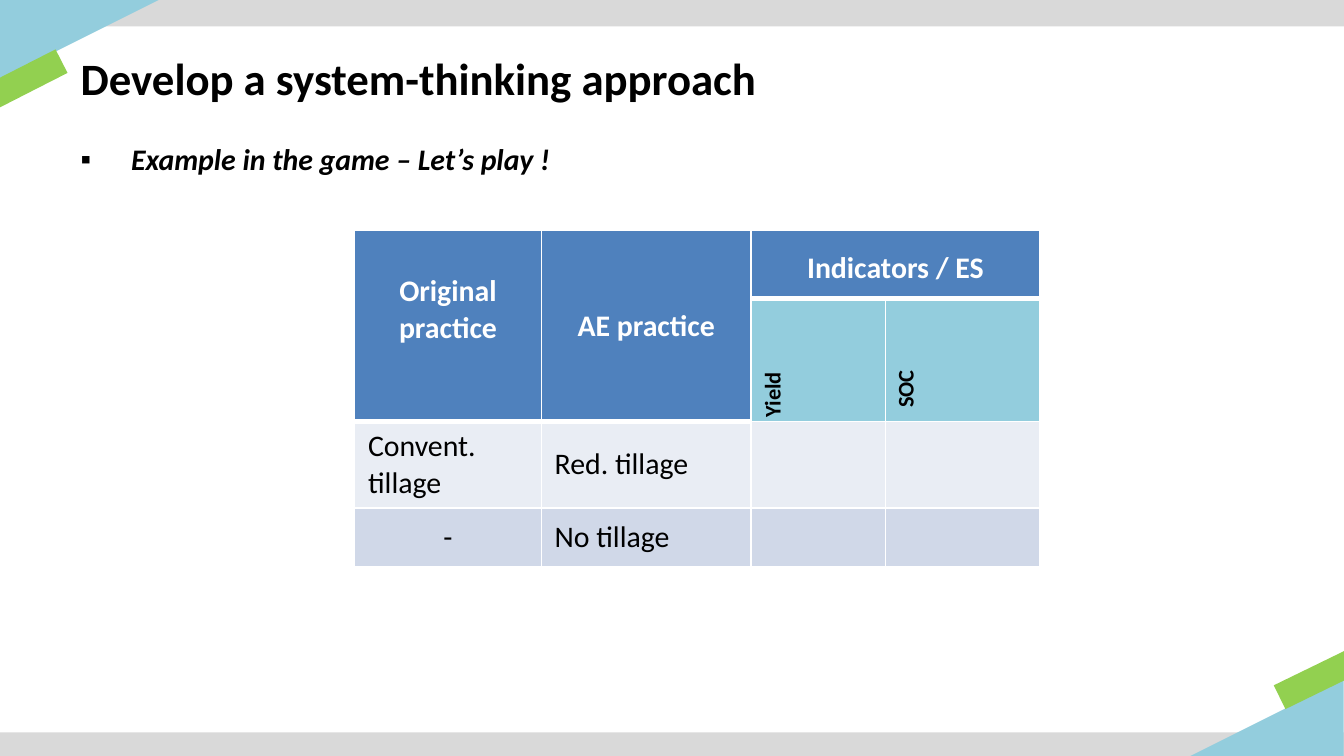
from lxml.etree import SubElement
from pptx import Presentation
from pptx.dml.color import RGBColor
from pptx.enum.shapes import MSO_SHAPE as Shape
from pptx.enum.text import MSO_ANCHOR as Anchor, MSO_AUTO_SIZE as AutoSize, PP_ALIGN as Align
from pptx.oxml.ns import qn
from pptx.util import Pt

GREY, TEAL, GREEN = "D9D9D9", "93CDDD", "92D050"
BLUE, WHITE, BLACK = "4F81BD", "FFFFFF", "000000"
LIGHT, MID = "E9EDF4", "D0D8E8"
HEADER = dict(bold=True, color=WHITE, align=Align.CENTER)
VERTICAL = dict(bold=True, size=12)


def rgb(value):
    """Return a colour from a hex string."""
    return RGBColor.from_string(value)


def write(tf, text, size=16, bold=False, italic=False, color=BLACK,
          align=Align.LEFT, spacing=None):
    """Write one formatted paragraph and return it."""
    p = tf.paragraphs[0]
    p.alignment = align
    if spacing:
        p.line_spacing = spacing
    r = p.add_run()
    r.text = text
    r.font.name = "Calibri"
    r.font.size = Pt(size)
    r.font.bold = bold
    r.font.italic = italic
    r.font.color.rgb = rgb(color)
    return p


def add_decor(s, kind, box, color, rotation=0):
    """Add a plain filled shape."""
    sp = s.shapes.add_shape(kind, *map(Pt, box))
    sp.shadow.inherit = False
    sp.fill.solid()
    sp.fill.fore_color.rgb = rgb(color)
    sp.line.fill.background()
    sp.rotation = rotation
    if kind == Shape.ISOSCELES_TRIANGLE:
        sp.adjustments[0] = 0


def place(sp, box, anchor):
    """Move a placeholder and return its text frame."""
    sp.left, sp.top, sp.width, sp.height = map(Pt, box)
    tf = sp.text_frame
    tf.word_wrap = True
    tf.auto_size = AutoSize.NONE
    tf.vertical_anchor = anchor
    return tf


def set_bullet(p, char, indent):
    """Give a paragraph a hanging bullet."""
    pPr = p._p.get_or_add_pPr()
    pPr.set("marL", str(Pt(indent)))
    pPr.set("indent", str(-Pt(indent)))
    SubElement(pPr, qn("a:buFont"), typeface="Arial")
    SubElement(pPr, qn("a:buChar"), char=char)


def set_borders(cell, **widths):
    """Draw white cell edges, keyed L, R, T, B."""
    tcPr = cell._tc.get_or_add_tcPr()
    for side, width in widths.items():
        ln = SubElement(tcPr, qn(f"a:ln{side}"), w=str(Pt(width)))
        SubElement(SubElement(ln, qn("a:solidFill")), qn("a:srgbClr"), val=WHITE)


def set_margins(cell, x, y):
    """Set the horizontal and vertical cell margins."""
    cell.margin_left = cell.margin_right = Pt(x)
    cell.margin_top = cell.margin_bottom = Pt(y)


def add_practice_table(s):
    """Add the table of practices and indicators."""
    widths, heights = (100, 112.5, 72, 82.5), (36.5, 60, 45.5, 31.5)
    fills = ([BLUE] * 4, [BLUE, BLUE, TEAL, TEAL], [LIGHT] * 4, [MID] * 4)
    table = s.shapes.add_table(4, 4, Pt(190), Pt(123.5), Pt(sum(widths)),
                               Pt(sum(heights))).table
    for column, width in zip(table.columns, widths):
        column.width = Pt(width)
    for i, (row, height) in enumerate(zip(table.rows, heights)):
        row.height = Pt(height)
        for cell, fill in zip(row.cells, fills[i]):
            top = {} if i else {"T": 1}
            set_borders(cell, L=1, R=1, **top, B=3 if fill == BLUE else 1)
            cell.fill.solid()
            cell.fill.fore_color.rgb = rgb(fill)
            cell.vertical_anchor = Anchor.MIDDLE
    for start, end in (((0, 0), (1, 0)), ((0, 1), (1, 1)), ((0, 2), (0, 3))):
        table.cell(*start).merge(table.cell(*end))

    texts = {
        (0, 0): ("Original practice", HEADER),
        (0, 1): ("AE practice", HEADER),
        (0, 2): ("Indicators / ES", dict(HEADER, spacing=1.2)),
        (1, 2): ("Yield", dict(VERTICAL, align=Align.JUSTIFY, spacing=1.2)),
        (1, 3): ("SOC", VERTICAL),
        (2, 0): ("Convent. tillage", {}),
        (2, 1): ("Red. tillage", {}),
        (3, 0): ("-", dict(align=Align.CENTER)),
        (3, 1): ("No tillage", {}),
    }
    for position, (text, style) in texts.items():
        write(table.cell(*position).text_frame, text, **style)
    for position in ((0, 1), (0, 2), (1, 2)):
        set_margins(table.cell(*position), 2, 1.5)
    for column in (2, 3):
        table.cell(1, column)._tc.get_or_add_tcPr().set("vert", "vert270")
    corner = table.cell(0, 0)
    corner.vertical_anchor = Anchor.TOP
    corner.margin_top = Pt(23)


def main():
    """Build and save the slide."""
    prs = Presentation()
    prs.slide_width, prs.slide_height = Pt(720), Pt(405)
    s = prs.slides.add_slide(prs.slide_layouts[1])

    add_decor(s, Shape.RECTANGLE, (0, 0, 720, 14.2), GREY)
    add_decor(s, Shape.ISOSCELES_TRIANGLE, (21.25, -21.25, 42.5, 85), TEAL, 90)
    add_decor(s, Shape.RECTANGLE, (-7.2, 35.3, 42.5, 14.2), GREEN, 333)
    add_decor(s, Shape.RECTANGLE, (0, 392.4, 720, 14.2), GREY)
    add_decor(s, Shape.ISOSCELES_TRIANGLE, (656, 342.75, 42.5, 85), TEAL, 270)
    add_decor(s, Shape.RECTANGLE, (683.3, 357.1, 42.5, 14.2), GREEN, 154)

    title, body = s.placeholders
    tf = place(title, (36, 16.5, 648, 50.5), Anchor.MIDDLE)
    write(tf, "Develop a system-thinking approach", size=24, bold=True)
    tf = place(body, (36, 72, 648, 289.5), Anchor.TOP)
    p = write(tf, "Example in the game – Let’s play !", bold=True, italic=True)
    set_bullet(p, "▪", 27)

    add_practice_table(s)
    prs.save("out.pptx")


if __name__ == "__main__":
    main()
